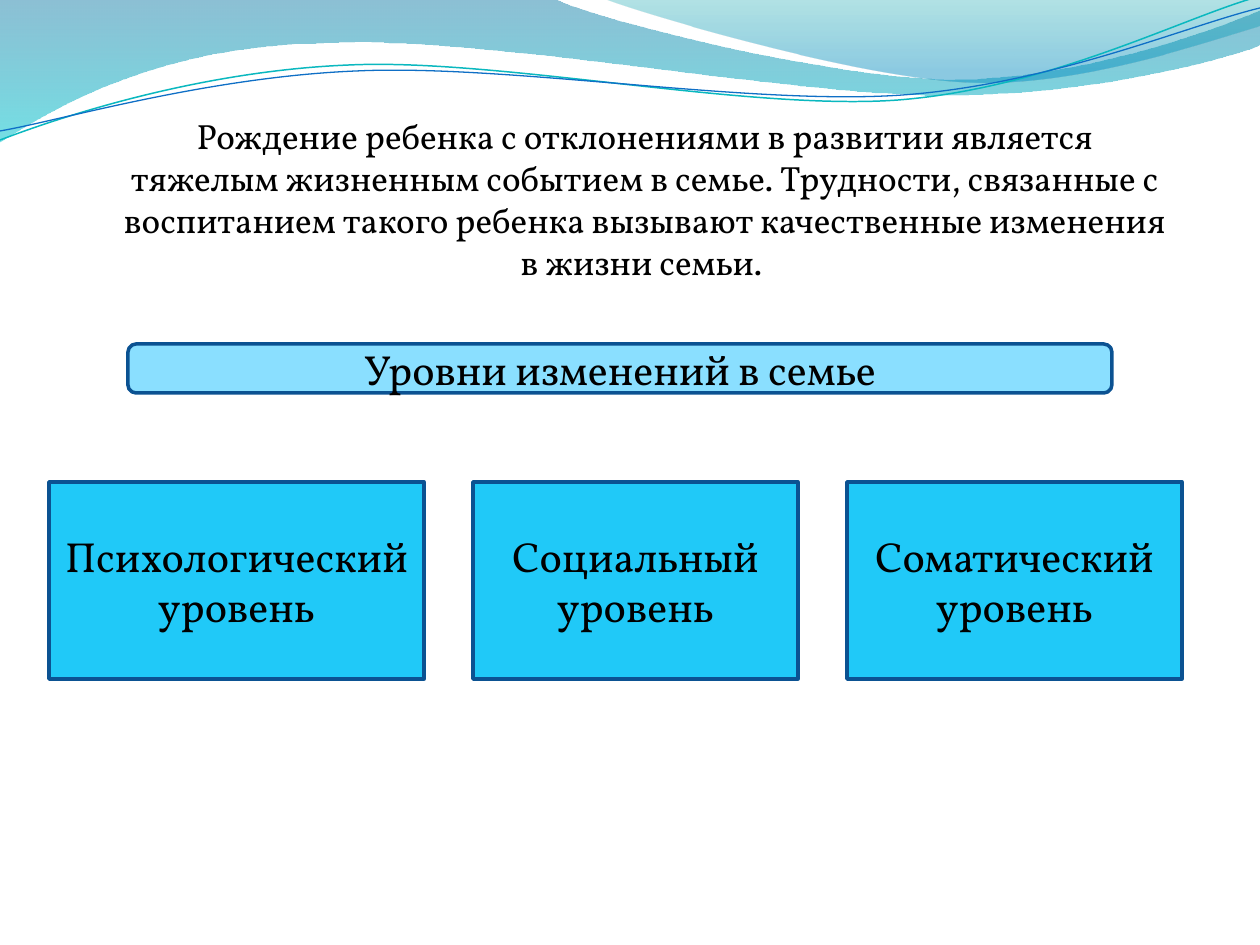
from dataclasses import dataclass

from lxml.etree import SubElement
from pptx import Presentation
from pptx.dml.color import RGBColor
from pptx.enum.shapes import MSO_SHAPE as Preset
from pptx.enum.text import MSO_ANCHOR as Anchor, MSO_AUTO_SIZE as AutoSize, PP_ALIGN as Align
from pptx.oxml.ns import qn
from pptx.shapes.autoshape import Shape
from pptx.slide import Slide
from pptx.text.text import TextFrame
from pptx.util import Emu, Pt

EMU_PER_PX = 914400 / 126

Point = tuple[int, int]


@dataclass(frozen=True)
class Theme:
    font: str = "Vollkorn"
    text: str = "000000"
    bar: str = "8ADFFF"
    level: str = "20C9F8"
    border: str = "0B5292"
    border_width: float = 2
    intro_size: int = 20
    label_size: int = 24


@dataclass(frozen=True)
class Stop:
    position: float
    color: str
    opacity: int


@dataclass(frozen=True)
class Wave:
    """Points come singly for a straight edge, in threes for a Bezier curve."""
    start: Point
    segments: list[list[Point]]
    stops: tuple[Stop, ...] = ()
    line_color: str = ""
    line_width: float = 0


@dataclass(frozen=True)
class Box:
    text: str
    left: int
    top: int
    width: int
    height: int
    fill: str
    preset: Preset = Preset.RECTANGLE


THEME = Theme()

# Filled bands, then the two thin lines over them
WAVES = [
    Wave((0, 0), [
        [(554, -1)],
        [(600, 21), (837, 79), (955, 79)],
        [(1075, 79), (1207, 33), (1260, 11)],
        [(1261, 45)],
        [(1239, 55), (1096, 96), (940, 95)],
        [(784, 95), (481, 35), (324, 43)],
        [(163, 45), (58, 105), (-1, 142)],
    ], stops=(Stop(0, "0074A1", 45), Stop(1, "00C6CF", 55))),
    Wave((604, -1), [
        [(641, 14), (859, 78), (969, 82)],
        [(1079, 87), (1211, 40), (1260, 26)],
        [(1260, 0)],
    ], stops=(Stop(0, "00A1A9", 30), Stop(0.8, "008BBF", 45))),
    Wave((0, 140), [
        [(60, 117), (199, 71), (349, 65)],
        [(498, 58), (747, 111), (898, 100)],
        [(1050, 88), (1182, 18), (1257, -3)],
    ], line_color="0AB8BF", line_width=0.85),
    Wave((0, 131), [
        [(59, 121), (207, 77), (357, 71)],
        [(508, 64), (752, 106), (903, 95)],
        [(1053, 84), (1186, 26), (1260, 8)],
    ], line_color="0F6FC6", line_width=0.75),
]

INTRO = (
    "Рождение ребенка с отклонениями в развитии является тяжелым жизненным "
    "событием в семье. Трудности, связанные с воспитанием такого ребенка "
    "вызывают качественные изменения в жизни семьи. "
)
HEADING = Box("Уровни изменений в семье", 128, 344, 984, 49, THEME.bar,
              Preset.ROUNDED_RECTANGLE)
LEVELS = [("Психологический", 375), ("Социальный", 325), ("Соматический", 335)]
LEVEL_LEFT, LEVEL_TOP, LEVEL_HEIGHT, LEVEL_GAP = 49, 482, 197, 49


def px(value: float) -> Emu:
    return Emu(round(value * EMU_PER_PX))


def rgb(color: str) -> RGBColor:
    return RGBColor.from_string(color)


def place(shape: Shape, left: int, top: int, width: int, height: int) -> None:
    shape.left, shape.top = px(left), px(top)
    shape.width, shape.height = px(width), px(height)


def write(frame: TextFrame, text: str, size: int, anchor: Anchor) -> None:
    frame.text = text
    frame.word_wrap = True
    frame.auto_size = AutoSize.NONE
    frame.vertical_anchor = anchor
    paragraph = frame.paragraphs[0]
    paragraph.alignment = Align.CENTER
    font = paragraph.runs[0].font
    font.name, font.size = THEME.font, Pt(size)
    font.color.rgb = rgb(THEME.text)


def bend(shape: Shape, segments: list[list[Point]]) -> None:
    """Join the straight edges of each three-point segment into one curve."""
    outline = shape.element.find(".//" + qn("a:path"))
    edges = iter(outline.findall(qn("a:lnTo")))
    for segment in segments:
        first, *rest = [next(edges) for _ in segment]
        if rest:
            first.tag = qn("a:cubicBezTo")
        for edge in rest:
            first.append(edge[0])
            outline.remove(edge)


def fill_gradient(shape: Shape, stops: tuple[Stop, ...]) -> None:
    shape.fill.gradient()
    shape.fill.gradient_angle = 270
    for target, stop in zip(shape.fill.gradient_stops, stops):
        target.position = stop.position
        target.color.rgb = rgb(stop.color)
    colors = shape.element.spPr.findall(".//" + qn("a:srgbClr"))
    for color, stop in zip(colors, stops):
        SubElement(color, qn("a:alpha"), val=str(stop.opacity * 1000))


def draw_wave(slide: Slide, wave: Wave) -> None:
    points = [(px(x), px(y)) for segment in wave.segments for x, y in segment]
    builder = slide.shapes.build_freeform(*map(px, wave.start))
    builder.add_line_segments(points, close=bool(wave.stops))
    shape = builder.convert_to_shape()
    bend(shape, wave.segments)
    shape.shadow.inherit = False
    if wave.stops:
        fill_gradient(shape, wave.stops)
        shape.line.fill.background()
    else:
        shape.fill.background()
        shape.line.color.rgb = rgb(wave.line_color)
        shape.line.width = Pt(wave.line_width)


def draw_box(slide: Slide, box: Box) -> None:
    shape = slide.shapes.add_shape(box.preset, 0, 0, 0, 0)
    place(shape, box.left, box.top, box.width, box.height)
    shape.shadow.inherit = False
    shape.fill.solid()
    shape.fill.fore_color.rgb = rgb(box.fill)
    shape.line.color.rgb = rgb(THEME.border)
    shape.line.width = Pt(THEME.border_width)
    write(shape.text_frame, box.text, THEME.label_size, Anchor.MIDDLE)


def main() -> None:
    presentation = Presentation()
    presentation.slide_width, presentation.slide_height = px(1260), px(945)
    slide = presentation.slides.add_slide(presentation.slide_layouts[5])

    # Decorative waves
    for wave in WAVES:
        draw_wave(slide, wave)

    # Introductory statement
    title = slide.shapes.title
    place(title, 108, 108, 1074, 183)
    write(title.text_frame, INTRO, THEME.intro_size, Anchor.TOP)

    # Heading bar and the row of levels
    draw_box(slide, HEADING)
    left = LEVEL_LEFT
    for name, width in LEVELS:
        draw_box(slide, Box(f"{name} уровень", left, LEVEL_TOP, width,
                            LEVEL_HEIGHT, THEME.level))
        left += width + LEVEL_GAP

    presentation.save("out.pptx")


if __name__ == "__main__":
    main()
